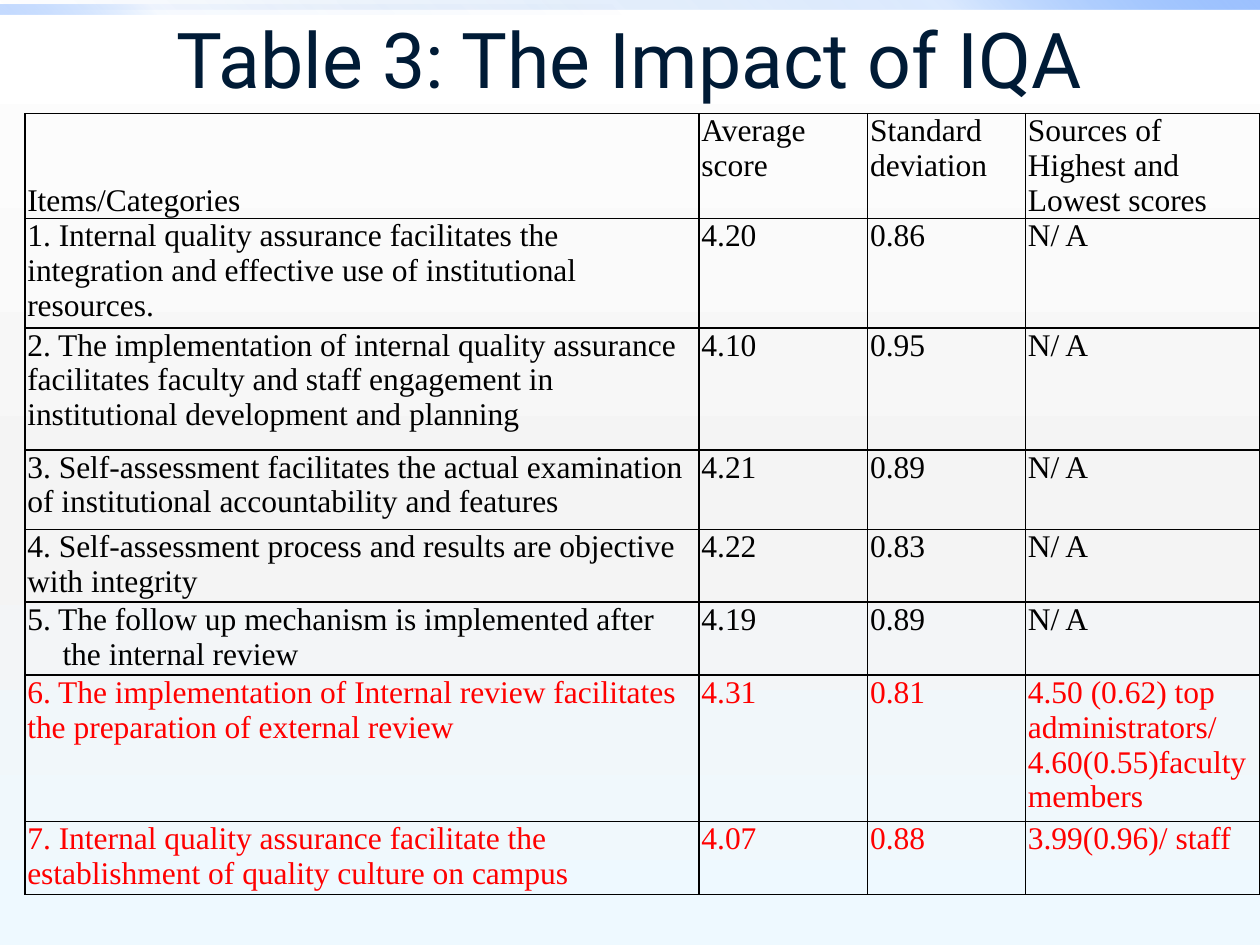
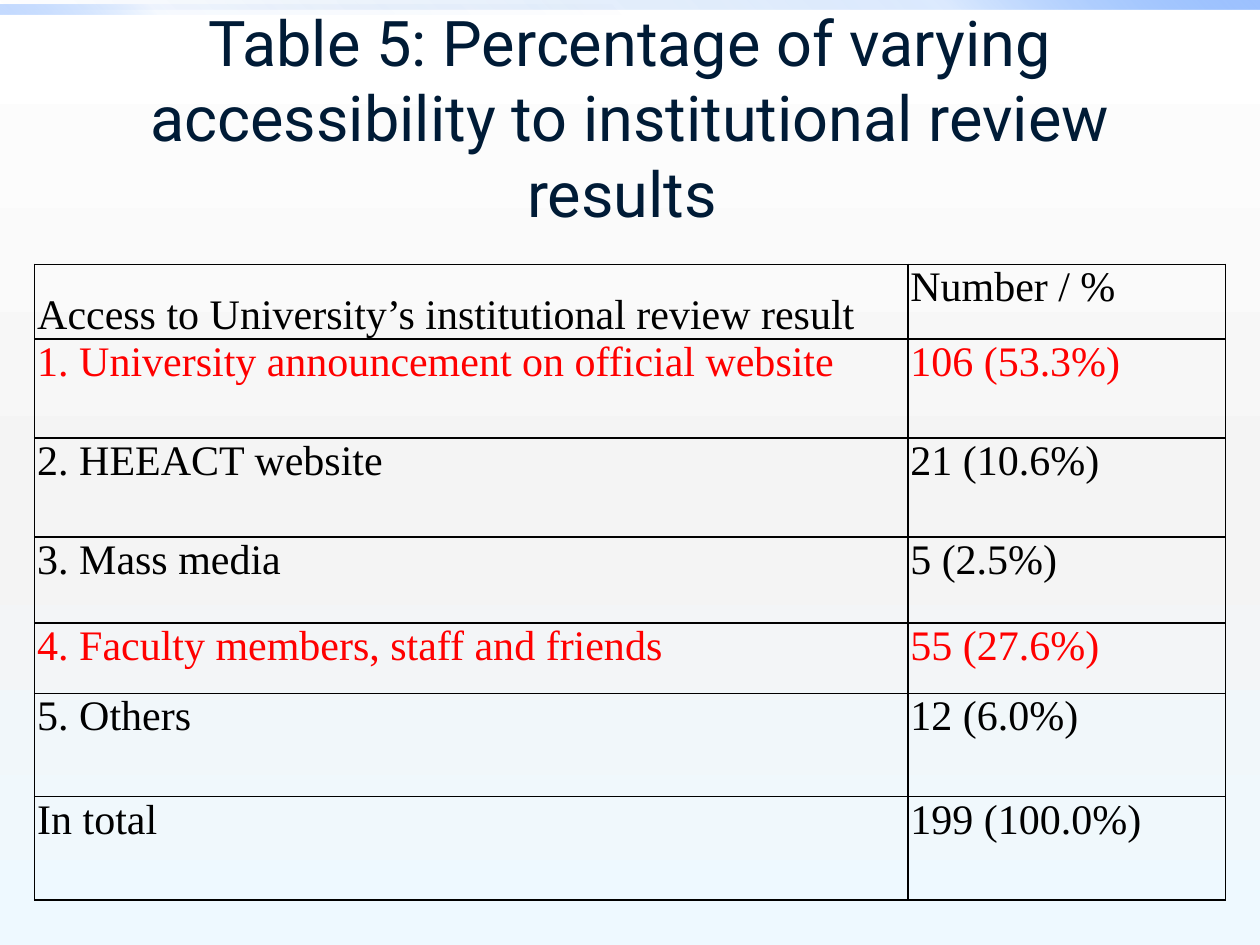
from dataclasses import dataclass

import pptx
import pptx.dml.color
import pptx.enum.shapes
import pptx.enum.text
import pptx.oxml
import pptx.oxml.ns
import pptx.util
from lxml import etree

Cm = pptx.util.Cm
Pt = pptx.util.Pt
RGB = pptx.dml.color.RGBColor.from_string
ANCHOR = pptx.enum.text.MSO_ANCHOR
qn = pptx.oxml.ns.qn


@dataclass(frozen=True)
class Theme:
    width: float = 25.4
    height: float = 19.05
    title_font: str = "Roboto"
    title_color: str = "001B36"
    body_font: str = "Times New Roman"
    ink: str = "000000"
    highlight: str = "FF0000"
    border: float = 1
    inset: float = 0.05
    hang: float = 0.71
    # Gradient stops: position %, colour, opacity %
    backdrop: tuple = ((0, "FFFFFF", 100), (55, "F4F4F4", 100), (100, "EEF9FF", 100))
    wide_band: tuple = ((0, "0058B7", 0), (75, "4F95FF", 20), (100, "9EC2FF", 100))
    half_band: tuple = ((0, "0058B7", 0), (75, "4F95FF", 5), (100, "9EC2FF", 60))


class Deck:
    def __init__(self, theme):
        self.theme = theme
        self.prs = pptx.Presentation()
        self.prs.slide_width = Cm(theme.width)
        self.prs.slide_height = Cm(theme.height)
        self.s = None

    def gradient(self, fill, element, stops, angle):
        """Fill with any number of stops; the angle runs clockwise."""
        fill.gradient()
        grad = element.find(".//" + qn("a:gradFill"))
        for child in list(grad):
            grad.remove(child)
        gs_list = etree.SubElement(grad, qn("a:gsLst"))
        for position, color, opacity in stops:
            gs = etree.SubElement(gs_list, qn("a:gs"), pos=str(position * 1000))
            clr = etree.SubElement(gs, qn("a:srgbClr"), val=color)
            if opacity < 100:
                etree.SubElement(clr, qn("a:alpha"), val=str(opacity * 1000))
        etree.SubElement(grad, qn("a:lin"), ang=str(angle * 60000), scaled="0")

    def slide(self):
        t = self.theme
        self.s = self.prs.slides.add_slide(self.prs.slide_layouts[6])
        self.gradient(self.s.background.fill, self.s.element, t.backdrop, 90)
        self.band(0, t.width, t.wide_band, 315)
        self.band(0.1, t.width / 2, t.half_band, 135)

    def band(self, top, width, stops, angle):
        sp = self.s.shapes.add_shape(pptx.enum.shapes.MSO_SHAPE.RECTANGLE,
                                     0, Cm(top), Cm(width), Cm(0.2))
        sp.shadow.inherit = False
        sp.line.fill.background()
        self.gradient(sp.fill, sp.element, stops, angle)

    def title(self, text, top, height, size):
        sp = self.s.shapes.add_textbox(Cm(1.27), Cm(top), Cm(22.86), Cm(height))
        tf = sp.text_frame
        tf.word_wrap = True
        tf.auto_size = pptx.enum.text.MSO_AUTO_SIZE.NONE
        tf.vertical_anchor = ANCHOR.MIDDLE
        p = tf.paragraphs[0]
        p.text = text
        p.alignment = pptx.enum.text.PP_ALIGN.CENTER
        self.font(p, self.theme.title_font, size, self.theme.title_color)

    def font(self, p, name, size, color):
        p.font.name = name
        p.font.size = Pt(size)
        p.font.color.rgb = RGB(color)

    def table(self, left, top, widths, heights, rows, size, red, hanging):
        """Bordered table; red and hanging hold row numbers."""
        t = self.theme
        frame = self.s.shapes.add_table(len(rows), len(widths), Cm(left), Cm(top),
                                        Cm(sum(widths)), Cm(sum(heights)))
        table = frame.table
        table.first_row = table.horz_banding = False
        for column, width in zip(table.columns, widths):
            column.width = Cm(width)
        for row, height in zip(table.rows, heights):
            row.height = Cm(height)
        for i, row in enumerate(rows):
            for j, text in enumerate(row):
                cell = table.cell(i, j)
                self.cell(cell, text, size, t.highlight if i in red else t.ink)
                if j == 0 and i in hanging:
                    pPr = cell.text_frame.paragraphs[0]._p.get_or_add_pPr()
                    pPr.set("marL", str(Cm(t.hang)))
                    pPr.set("indent", str(-Cm(t.hang)))
        table.cell(0, 0).vertical_anchor = ANCHOR.BOTTOM

    def cell(self, cell, text, size, color):
        t = self.theme
        cell.margin_left = cell.margin_right = Cm(t.inset)
        cell.margin_top = cell.margin_bottom = 0
        cell.vertical_anchor = ANCHOR.TOP
        cell.text = text
        for p in cell.text_frame.paragraphs:
            self.font(p, t.body_font, size, color)
        tcPr = cell._tc.get_or_add_tcPr()
        for side in ("lnL", "lnR", "lnT", "lnB"):
            ln = etree.SubElement(tcPr, qn("a:" + side), w=str(Pt(t.border)))
            solid = etree.SubElement(ln, qn("a:solidFill"))
            etree.SubElement(solid, qn("a:srgbClr"), val=t.ink)
        cell.fill.background()


IMPACT = [
    ("Items/Categories", "Average score", "Standard\ndeviation",
     "Sources of Highest and Lowest scores"),
    ("1. Internal quality assurance facilitates the integration and effective use "
     "of institutional resources.", "4.20", "0.86", "N/ A"),
    ("2. The implementation of internal quality assurance facilitates faculty and "
     "staff engagement in institutional development and planning",
     "4.10", "0.95", "N/ A"),
    ("3. Self-assessment facilitates the actual examination of institutional "
     "accountability and features", "4.21", "0.89", "N/ A"),
    ("4. Self-assessment process and results are objective with integrity",
     "4.22", "0.83", "N/ A"),
    ("5. The follow up mechanism is implemented after the internal review",
     "4.19", "0.89", "N/ A"),
    ("6. The implementation of Internal review facilitates the preparation of "
     "external review", "4.31", "0.81",
     "4.50 (0.62) top administrators/\n4.60(0.55)faculty members"),
    ("7. Internal quality assurance facilitate the establishment of quality "
     "culture on campus", "4.07", "0.88", "3.99(0.96)/ staff"),
]

ACCESS = [
    ("Access to University’s institutional review result", "Number / %"),
    ("1. University announcement on official website", "106 (53.3%)"),
    ("2. HEEACT website", "21 (10.6%)"),
    ("3. Mass media", "5 (2.5%)"),
    ("4. Faculty members, staff and friends", "55 (27.6%)"),
    ("5. Others", "12 (6.0%)"),
    ("In total", "199 (100.0%)"),
]


def main():
    deck = Deck(Theme())

    deck.slide()
    deck.title("Table 3: The Impact of IQA", 0, 2.34, 44)
    deck.table(0.5, 2.29, [13.59, 3.4, 3.18, 4.72],
               [1.47, 2.21, 2.46, 1.6, 1.47, 1.47, 2.95, 1.47],
               IMPACT, 18, red={6, 7}, hanging={5})

    deck.slide()
    deck.title("Table 5: Percentage of varying accessibility to institutional "
               "review results ", 0.76, 3.18, 36)
    deck.table(0.7, 5.33, [17.6, 6.4],
               [1.5, 2, 2, 1.73, 1.42, 2.08, 2.08],
               ACCESS, 24, red={1, 4}, hanging={5, 6})

    deck.prs.save("out.pptx")


if __name__ == "__main__":
    main()
